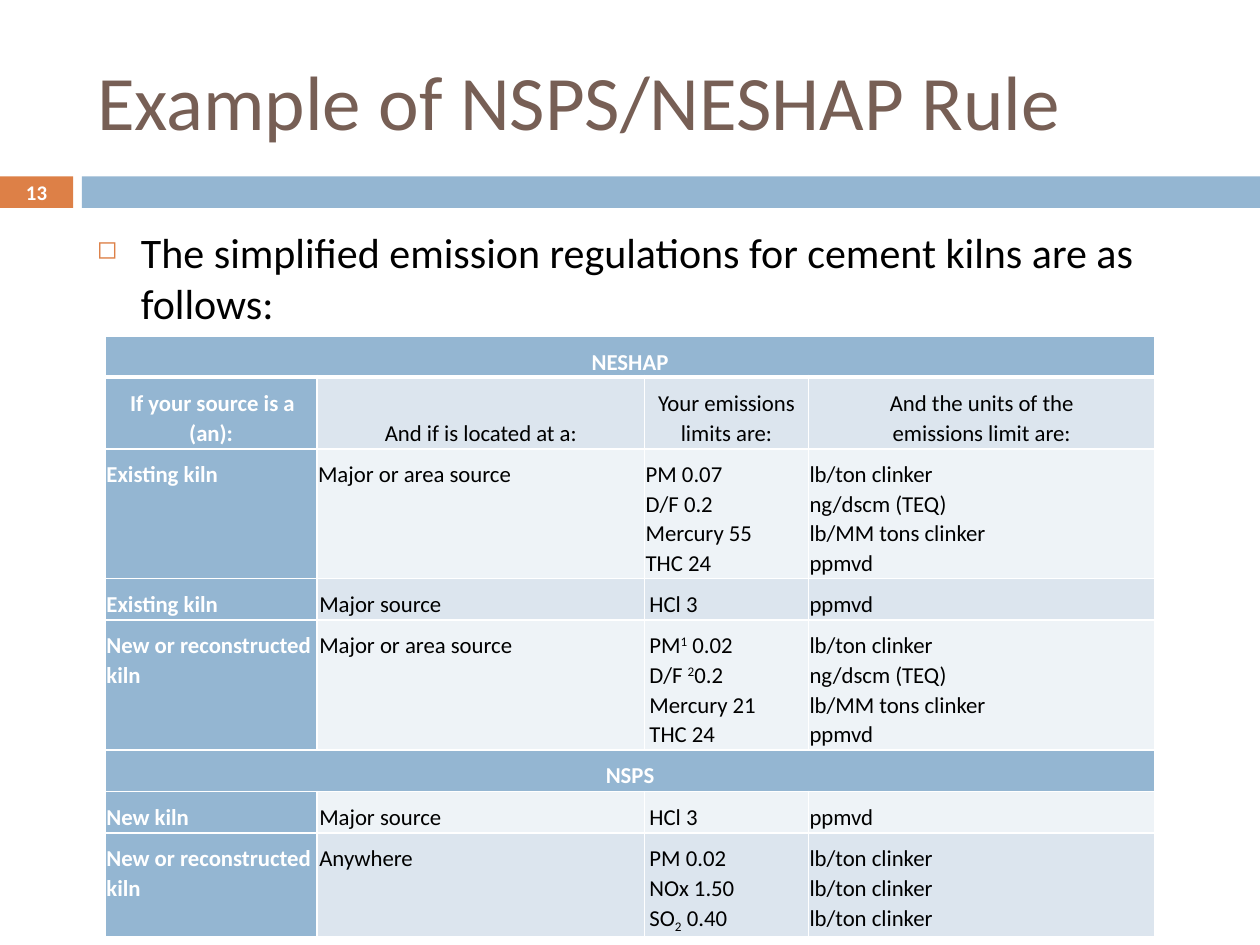
import dataclasses
import typing

import pptx
import pptx.dml.color
import pptx.enum.shapes
import pptx.enum.text
import pptx.oxml
import pptx.oxml.ns
import pptx.util

Inches, Pt = pptx.util.Inches, pptx.util.Pt
Align, Anchor = pptx.enum.text.PP_ALIGN, pptx.enum.text.MSO_ANCHOR
WIDE, HIGH = Inches(10), Inches(7.5)


@dataclasses.dataclass(frozen=True)
class Theme:
    font: str = "Calibri"
    brown: str = "775F55"
    orange: str = "DD8047"
    blue: str = "94B6D2"
    bands: tuple = ("EEF3F7", "DCE5EE")
    white: str = "FFFFFF"
    black: str = "000000"
    title: float = 44
    body: float = 24
    cell: float = 13
    number: float = 11.9


class Box(typing.NamedTuple):
    """Left, top, width and height in percent of the slide."""
    x: float
    y: float
    w: float
    h: float

    def place(self) -> tuple:
        sides = zip(self, (WIDE, HIGH, WIDE, HIGH))
        return tuple(round(part * side / 100) for part, side in sides)


class Row(typing.NamedTuple):
    """Height in inches; each cell is a tuple of paragraphs."""
    high: float
    cells: tuple
    kind: str = "data"


THEME = Theme()
COLS = (1.68, 2.6, 1.3, 2.75)
INDENTS = (0, 0.01, 0.03, 0)
AREA = ("Major or area source",)
MAJOR = ("Major source",)
REBUILT = ("New or reconstructed kiln",)
POUND = "lb/ton clinker"
UNITS = "lb/ton clinker\nng/dscm (TEQ)\nlb/MM tons clinker"

# In a paragraph, | parts the runs; ^ raises a run and _ lowers it.
ROWS = (
    Row(0.32, (("NESHAP",),), "banner"),
    Row(0.57, (("If your source is a (an):",), ("And if is located at a:",),
               ("Your emissions limits are:",),
               ("And the units of the\nemissions limit are:",)), "head"),
    Row(1.03, (("Existing kiln",), AREA,
               ("PM 0.07", "D/F 0.2", "Mercury 55", "THC 24"),
               (UNITS, "ppmvd")), "flush"),
    Row(0.33, (("Existing kiln",), MAJOR, ("HCl 3",), ("ppmvd",))),
    Row(1.03, (REBUILT, AREA,
               ("PM|^1| 0.02", "D/F |^2|0.2", "Mercury 21", "THC 24"),
               (UNITS + "\nppmvd",))),
    Row(0.33, (("NSPS",),), "banner"),
    Row(0.33, (("New kiln",), MAJOR, ("HCl 3",), ("ppmvd",))),
    Row(0.82, (REBUILT, ("Anywhere",),
               ("PM 0.02", "NOx 1.50", "SO|_2| 0.40"), (POUND,) * 3)),
)


def apply(item: typing.Any, **values: typing.Any) -> None:
    for name, value in values.items():
        setattr(item, name, value)


def tint(text: str) -> pptx.dml.color.RGBColor:
    return pptx.dml.color.RGBColor.from_string(text)


def paint(item: typing.Any, color: str) -> None:
    item.fill.solid()
    item.fill.fore_color.rgb = tint(color)


def write(para: typing.Any, text: str, size: float, color: str,
          bold: bool = False) -> None:
    shifts = {"^": "30000", "_": "-25000"}
    for count, line in enumerate(text.split("\n")):
        if count:
            para.add_line_break()
        for part in line.split("|"):
            run = para.add_run()
            run.text = part.lstrip("^_")
            apply(run.font, name=THEME.font, size=Pt(size), bold=bold)
            run.font.color.rgb = tint(color)
            if part[0] in shifts:
                run.font._element.set("baseline", shifts[part[0]])


def bar(slide: typing.Any, box: Box, color: str) -> None:
    kind = pptx.enum.shapes.MSO_SHAPE.RECTANGLE
    shape = slide.shapes.add_shape(kind, *box.place())
    paint(shape, color)
    shape.line.fill.background()
    shape.shadow.inherit = False


def label(slide: typing.Any, box: Box, **frame: typing.Any) -> typing.Any:
    """Add a wrapped text box and return its first paragraph."""
    area = slide.shapes.add_textbox(*box.place()).text_frame
    apply(area, word_wrap=True, **frame)
    return area.paragraphs[0]


def indent(para: typing.Any, first: float, left: float = 0) -> None:
    props = para._p.get_or_add_pPr()
    props.set("marL", str(Inches(left)))
    props.set("indent", str(Inches(first)))


def bullet(para: typing.Any) -> None:
    space = pptx.oxml.ns.nsdecls("a")
    for mark in (f'<a:buClr {space}><a:srgbClr val="{THEME.orange}"/></a:buClr>',
                 f'<a:buSzPct {space} val="60000"/>',
                 f'<a:buChar {space} char="◻"/>'):
        para._p.get_or_add_pPr().append(pptx.oxml.parse_xml(mark))


def border(cell: typing.Any, row: int) -> None:
    space = pptx.oxml.ns.nsdecls("a")
    for side in "LRTB":
        thick = (row, side) in ((0, "B"), (1, "T"))
        cell._tc.get_or_add_tcPr().append(pptx.oxml.parse_xml(
            f'<a:ln{side} {space} w="{Pt(3 if thick else 1)}"><a:solidFill>'
            f'<a:srgbClr val="{THEME.white}"/></a:solidFill></a:ln{side}>'))


def fill(cell: typing.Any, paras: tuple, row: int, col: int) -> None:
    """Write the paragraphs of one cell in the style of its row."""
    kind = ROWS[row].kind
    strong = col == 0
    shift = {"data": INDENTS[col], "head": 0.02 if strong else 0}.get(kind, 0)
    low = kind == "head" or row == 0
    apply(cell, vertical_anchor=Anchor.BOTTOM if low else Anchor.TOP,
          margin_left=Inches(0.01), margin_right=Inches(0.01),
          margin_top=Inches(0.08), margin_bottom=Inches(0.01))
    area = cell.text_frame
    for count, text in enumerate(paras):
        para = area.add_paragraph() if count else area.paragraphs[0]
        center = kind in ("banner", "head")
        apply(para, line_spacing=1.07,
              alignment=Align.CENTER if center else Align.LEFT)
        indent(para, shift)
        write(para, text, THEME.cell,
              THEME.white if strong else THEME.black, strong)


def grid(slide: typing.Any, box: Box) -> None:
    table = slide.shapes.add_table(len(ROWS), len(COLS), *box.place()).table
    for col, width in zip(table.columns, COLS):
        col.width = Inches(width)
    for num, row in enumerate(ROWS):
        table.rows[num].height = Inches(row.high)
        for col in range(len(COLS)):
            cell = table.cell(num, col)
            border(cell, num)
            solid = col == 0 or row.kind == "banner"
            paint(cell, THEME.blue if solid else THEME.bands[num % 2])
        if row.kind == "banner":
            table.cell(num, 0).merge(table.cell(num, len(COLS) - 1))
        for col, paras in enumerate(row.cells):
            fill(table.cell(num, col), paras, num, col)


def main() -> None:
    deck = pptx.Presentation()
    apply(deck, slide_width=WIDE, slide_height=HIGH)
    slide = deck.slides.add_slide(deck.slide_layouts[5])

    bar(slide, Box(0, 18.67, 5.8, 3.33), THEME.orange)
    bar(slide, Box(6.5, 18.67, 93.5, 3.33), THEME.blue)

    title = slide.shapes.title
    spot = Box(6.7, 3.33, 89.2, 14.4).place()
    apply(title, **dict(zip(("left", "top", "width", "height"), spot)))
    apply(title.text_frame, vertical_anchor=Anchor.MIDDLE, word_wrap=True,
          auto_size=pptx.enum.text.MSO_AUTO_SIZE.NONE)
    head = title.text_frame.paragraphs[0]
    head.alignment = Align.LEFT
    write(head, "Example of NSPS/NESHAP Rule", THEME.title, THEME.brown)

    number = label(slide, Box(0, 18.53, 5.8, 3.6), margin_top=0,
                   margin_bottom=0, vertical_anchor=Anchor.MIDDLE)
    number.alignment = Align.CENTER
    write(number, "13", THEME.number, THEME.white, True)

    body = label(slide, Box(6.7, 23.33, 89.2, 65.6))
    body.space_before = Pt(7)
    indent(body, -0.35, 0.35)
    bullet(body)
    write(body, "The simplified emission regulations for cement kilns are as "
          "follows:", THEME.body, THEME.black)

    grid(slide, Box(8.35, 35.6, 83.3, 61.47))
    deck.save("out.pptx")


if __name__ == "__main__":
    main()
